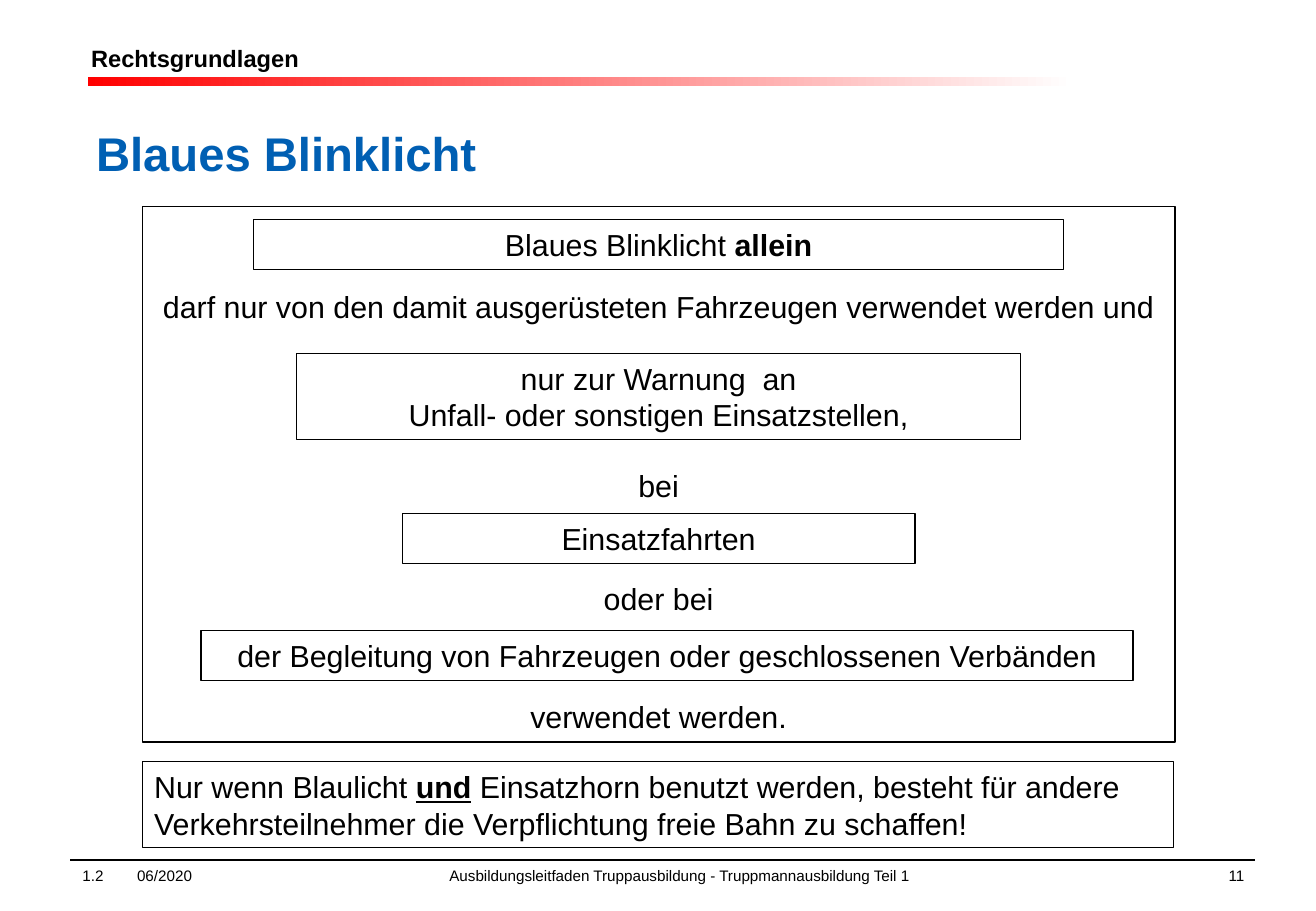
"""Build the slide on the use of the blue flashing light."""
from lxml import etree
from pptx import Presentation
from pptx.dml.color import RGBColor
from pptx.enum.shapes import MSO_CONNECTOR as Link, MSO_SHAPE as Shape
from pptx.enum.text import MSO_ANCHOR as Anchor, MSO_AUTO_SIZE as Auto, PP_ALIGN as Align
from pptx.oxml.ns import qn
from pptx.util import Inches, Pt

BLACK, BLUE, RED, WHITE = "000000", "005FB3", "FF0000", "FFFFFF"
MID = 5.42
TITLE = "Blaues Blinklicht"
HEAD = "Rechtsgrundlagen"
FOOT = "1.2\t06/2020\tAusbildungsleitfaden Truppausbildung - Truppmannausbildung Teil 1"
TABS = (0.45, 3.02)

BOXES = [
    (MID, 1.81, 6.67, 0.41, [[("Blaues Blinklicht ", ""), ("allein", "b")]]),
    (MID, 2.91, 5.96, 0.71, [[("nur zur Warnung  an", "")],
                             [("Unfall- oder sonstigen Einsatzstellen,", "")]]),
    (MID, 4.23, 4.22, 0.41, [[("Einsatzfahrten", "")]]),
    (5.49, 5.19, 7.67, 0.41,
     [[("der Begleitung von Fahrzeugen oder geschlossenen Verbänden", "")]]),
]
LINKS = [
    (2.32, 8.38, "darf nur von den damit ausgerüsteten Fahrzeugen verwendet werden und"),
    (3.8, 1.75, "bei"),
    (4.73, 2.22, "oder bei"),
    (5.7, 3.18, "verwendet werden."),
]
NOTE = [[("Nur wenn Blaulicht ", ""), ("und", "bu"),
         (" Einsatzhorn benutzt werden, besteht für andere "
          "Verkehrsteilnehmer die Verpflichtung freie Bahn zu schaffen!", "")]]


def color(code):
    return RGBColor.from_string(code)


def write(shape, paras, size=18, align=Align.LEFT, tone=BLACK, anchor=Anchor.MIDDLE, wrap=True):
    frame = shape.text_frame
    frame.word_wrap = wrap
    frame.auto_size = Auto.NONE
    frame.vertical_anchor = anchor
    for i, runs in enumerate(paras):
        para = frame.add_paragraph() if i else frame.paragraphs[0]
        para.alignment = align
        for text, style in runs:
            run = para.add_run()
            run.text = text
            font = run.font
            font.name, font.size = "Arial", Pt(size)
            font.bold, font.underline = "b" in style, "u" in style
            font.color.rgb = color(tone)
    return frame


def label(slide, area, paras, **look):
    return write(slide.shapes.add_textbox(*map(Inches, area)), paras, **look)


def rect(slide, area):
    shape = slide.shapes.add_shape(Shape.RECTANGLE, *map(Inches, area))
    shape.shadow.inherit = False
    shape.fill.background()
    shape.line.color.rgb = color(BLACK)
    shape.line.width = Pt(0.75)
    return shape


def header(slide):
    bar = rect(slide, (0.72, 0.63, 8.12, 0.08))
    bar.line.fill.background()
    bar.fill.gradient()
    bar.fill.gradient_angle = 0
    for stop, tone, place in zip(bar.fill.gradient_stops, (RED, WHITE), (0, 1)):
        stop.color.rgb = color(tone)
        stop.position = place
    frame = label(slide, (0.73, 0.35, 4.46, 0.26), [[(HEAD, "b")]], size=14)
    frame.margin_left = frame.margin_right = Inches(0.02)
    frame.margin_top = frame.margin_bottom = Inches(0.01)
    title = slide.shapes.title
    title.left, title.top, title.width, title.height = map(Inches, (0.69, 0.94, 9.44, 0.63))
    write(title, [[(TITLE, "b")]], size=28, tone=BLUE)


def footer(slide):
    ends = map(Inches, (0.58, 7.08, 10.33, 7.08))
    rule = slide.shapes.add_connector(Link.STRAIGHT, *ends)
    rule.line.color.rgb = color(BLACK)
    rule.line.width = Pt(0.75)
    etree.SubElement(rule._element.spPr, qn("a:effectLst"))
    frame = label(slide, (0.58, 7.08, 9.27, 0.42), [[(FOOT, "")]], size=9, anchor=Anchor.TOP)
    stops = etree.SubElement(frame.paragraphs[0]._p.get_or_add_pPr(), qn("a:tabLst"))
    for pos in TABS:
        etree.SubElement(stops, qn("a:tab"), pos=str(Inches(pos)), algn="l")
    label(slide, (9.34, 7.08, 1, 0.26), [[("11", "")]], size=9, align=Align.RIGHT,
          anchor=Anchor.TOP)


def main():
    deck = Presentation()
    deck.slide_width, deck.slide_height = Inches(10.83), Inches(7.5)
    slide = deck.slides.add_slide(deck.slide_layouts[5])
    header(slide)
    rect(slide, (1.17, 1.7, 8.5, 4.41))
    for mid, top, wide, high, paras in BOXES:
        write(rect(slide, (mid - wide / 2, top, wide, high)), paras, align=Align.CENTER)
    for top, wide, text in LINKS:
        label(slide, (MID - wide / 2, top, wide, 0.4), [[(text, "")]], align=Align.CENTER,
              wrap=False)
    write(rect(slide, (1.17, 6.27, 8.49, 0.71)), NOTE)
    footer(slide)
    deck.save("out.pptx")


if __name__ == "__main__":
    main()
